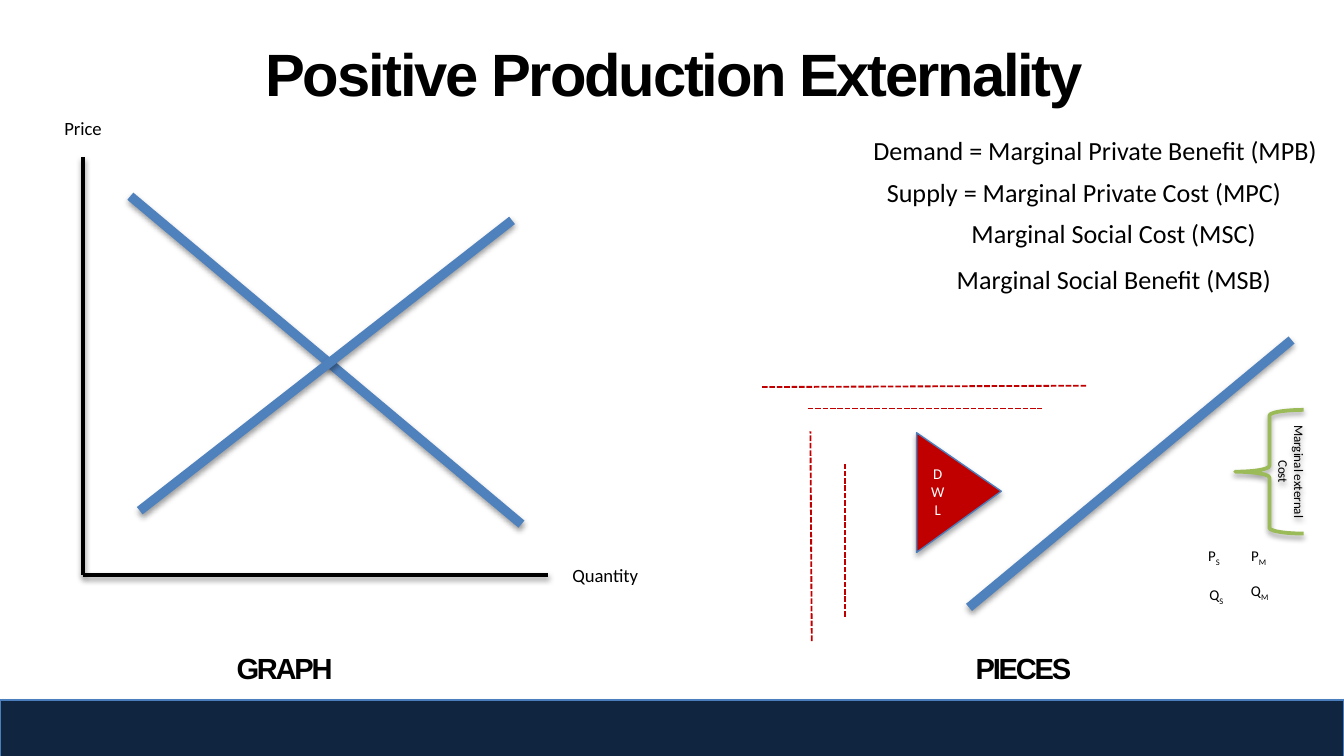
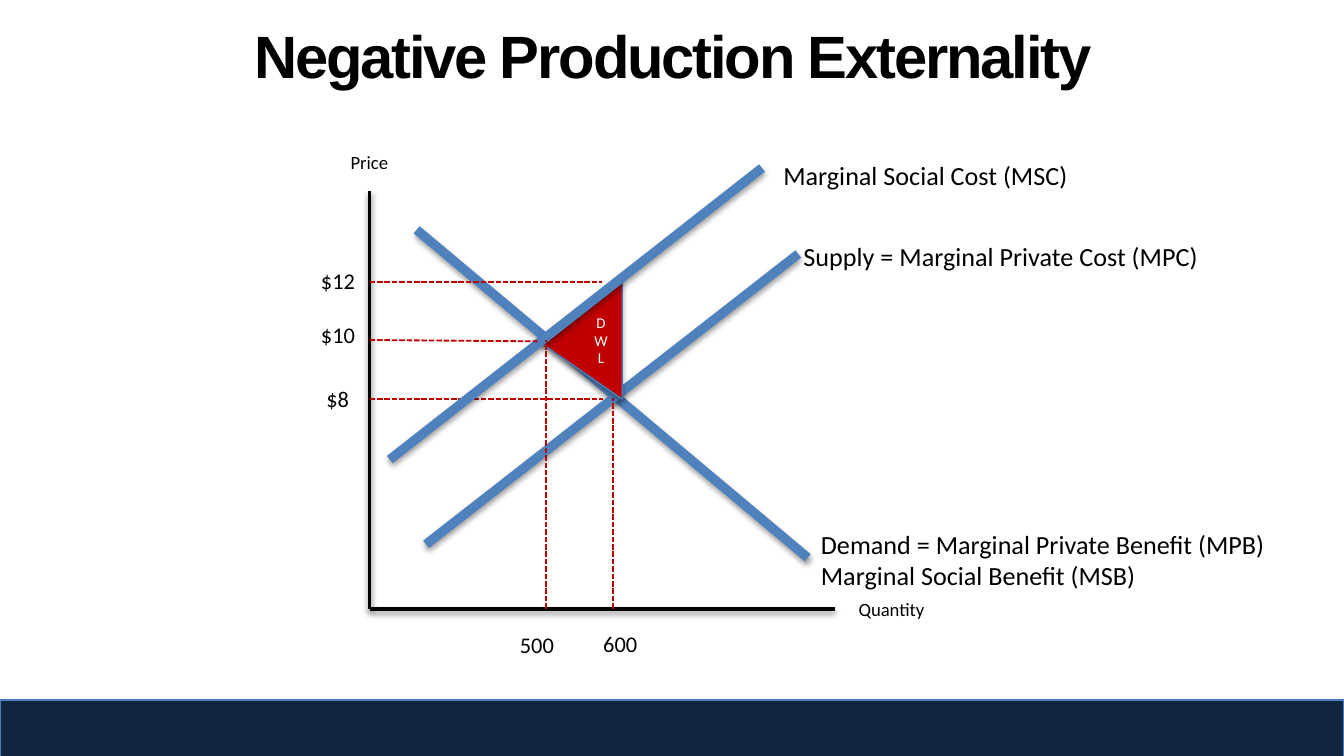
from dataclasses import dataclass

from lxml.etree import SubElement
from pptx import Presentation
from pptx.dml.color import RGBColor
from pptx.enum.dml import MSO_LINE_DASH_STYLE as DASH
from pptx.enum.shapes import MSO_CONNECTOR as CONN, MSO_SHAPE as SHAPE
from pptx.enum.text import MSO_ANCHOR as ANCHOR, MSO_AUTO_SIZE as FIT, PP_ALIGN as ALIGN
from pptx.oxml.ns import qn
from pptx.util import Inches, Pt


@dataclass(frozen=True)
class Theme:
    ink: str = "000000"
    paper: str = "FFFFFF"
    band: str = "10253F"
    edge: str = "4B7EBC"
    curve: str = "4F81BD"
    loss: str = "C00000"
    brace: str = "9BBB59"
    head_font: str = "Arial"
    body_font: str = "Calibri"
    title: float = 32
    caption: float = 15.6
    caption_lead: float = 30.7
    curve_name: float = 14
    value: float = 12
    axis: float = 10
    small: float = 8
    tiny: float = 7
    tracking: float = -1.2
    shape_shadow: tuple = (35, 3.1, 1.8)  # opacity %, blur pt, distance pt
    line_shadow: tuple = (38, 3.1, 1.6)


# Names of the curves and the widths of their labels
MSC = ("Marginal Social Cost (MSC)", 2.34)
MPB = ("Demand = Marginal Private Benefit (MPB)", 3.54)
MPC = ("Supply = Marginal Private Cost (MPC)", 3.17)
MSB = ("Marginal Social Benefit (MSB)", 2.57)


def write(p, text, size, font=Theme.body_font, color=Theme.ink, bold=False,
          tracking=0, baseline=0):
    """Add one formatted run to a paragraph."""
    r = p.add_run()
    r.text = text
    r.font.name, r.font.size, r.font.bold = font, Pt(size), bold
    r.font.color.rgb = RGBColor.from_string(color)
    rPr = r._r.get_or_add_rPr()
    if tracking:
        rPr.set("spc", str(round(tracking * 100)))
    if baseline:
        rPr.set("baseline", str(baseline * 1000))


class Deck:
    def __init__(self, theme):
        self.t = theme
        self.prs = Presentation()
        self.prs.slide_width = Inches(10)
        self.prs.slide_height = Inches(10) * 9 // 16
        self.s = None

    def heading_style(self):
        return dict(font=self.t.head_font, bold=True, tracking=self.t.tracking)

    def inset(self, tf):
        tf.margin_left = tf.margin_right = Inches(0.07)
        tf.margin_top = tf.margin_bottom = Inches(0.04)

    def effects(self, sp, shadow=None):
        """Replace the inherited shadow with the given one, or with none."""
        effects = SubElement(sp._element.spPr, qn("a:effectLst"))
        if shadow:
            opacity, blur, distance = shadow
            outer = SubElement(effects, qn("a:outerShdw"), blurRad=str(Pt(blur)),
                               dist=str(Pt(distance)), dir="5400000", rotWithShape="0")
            color = SubElement(outer, qn("a:srgbClr"), val=self.t.ink)
            SubElement(color, qn("a:alpha"), val=str(opacity * 1000))

    def slide(self, title, x, y, w):
        """Start a slide with its band and title."""
        self.s = self.prs.slides.add_slide(self.prs.slide_layouts[5])
        self.shape(SHAPE.RECTANGLE, 0, 5.21, 10, 0.42, fill=self.t.band)
        sp = self.s.shapes.title
        sp.left, sp.top, sp.width, sp.height = map(Inches, (x, y, w, 0.94))
        tf = sp.text_frame
        tf.word_wrap, tf.auto_size, tf.vertical_anchor = True, FIT.NONE, ANCHOR.TOP
        self.inset(tf)
        p = tf.paragraphs[0]
        p.alignment = ALIGN.CENTER
        write(p, title, self.t.title, **self.heading_style())

    def shape(self, kind, x, y, w, h, fill=None, line=None, width=0.75, shadow=None):
        sp = self.s.shapes.add_shape(kind, *map(Inches, (x, y, w, h)))
        if fill:
            sp.fill.solid()
            sp.fill.fore_color.rgb = RGBColor.from_string(fill)
        else:
            sp.fill.background()
        sp.line.color.rgb = RGBColor.from_string(line or self.t.edge)
        sp.line.width = Pt(width)
        self.effects(sp, shadow or self.t.shape_shadow)
        return sp

    def side_text(self, sp, text, size, color, vert):
        """Centre turned text inside a shape."""
        tf = sp.text_frame
        tf.word_wrap, tf.vertical_anchor = True, ANCHOR.MIDDLE
        tf._txBody.bodyPr.set("vert", vert)
        p = tf.paragraphs[0]
        p.alignment = ALIGN.CENTER
        write(p, text, size, color=color)

    def loss_triangle(self, x, y, rotation, vert):
        sp = self.shape(SHAPE.ISOSCELES_TRIANGLE, x, y, 0.89, 0.63, fill=self.t.loss)
        sp.adjustments[0] = 0.489
        sp.rotation = rotation
        self.side_text(sp, "DWL", self.t.small, self.t.paper, vert)

    def cost_brace(self, x, y, w, h):
        sp = self.shape(SHAPE.LEFT_BRACE, x, y, w, h, line=self.t.brace, width=2,
                        shadow=self.t.line_shadow)
        self.side_text(sp, "Marginal external Cost", self.t.tiny, self.t.ink, "vert")

    def line(self, x1, y1, x2, y2, color, width, dash=None, shadow=None):
        ln = self.s.shapes.add_connector(CONN.STRAIGHT, *map(Inches, (x1, y1, x2, y2)))
        ln.line.color.rgb = RGBColor.from_string(color)
        ln.line.width = Pt(width)
        if dash:
            ln.line.dash_style = dash
        self.effects(ln, shadow)

    def axis(self, *ends):
        self.line(*ends, self.t.ink, 2, shadow=self.t.line_shadow)

    def curve(self, *ends):
        self.line(*ends, self.t.curve, 5, shadow=self.t.line_shadow)

    def guide(self, *ends):
        self.line(*ends, self.t.loss, 1, dash=DASH.SQUARE_DOT)

    def label(self, text, x, y, w, size, sub=""):
        """Place a one-line label, with an optional subscript."""
        h = 0.1 + size * 0.017
        tf = self.s.shapes.add_textbox(*map(Inches, (x, y, w, h))).text_frame
        tf.word_wrap, tf.auto_size = False, FIT.SHAPE_TO_FIT_TEXT
        p = tf.paragraphs[0]
        write(p, text, size)
        if sub:
            write(p, sub, size, baseline=-25)

    def curve_name(self, name, x, y):
        text, w = name
        self.label(text, x, y, w, self.t.curve_name)

    def graph(self, x, y):
        """Draw axes with demand and supply, measured from the origin (x, y)."""
        self.axis(x, y, x + 3.46, y)
        self.axis(x, y - 3.11, x, y)
        self.label("Quantity", x + 3.54, y - 0.13, 0.7, self.t.axis)
        self.label("Price", x - 0.24, y - 3.46, 0.48, self.t.axis)
        self.curve(x + 0.35, y - 2.82, x + 3.26, y - 0.38)
        self.curve(x + 3.19, y - 2.64, x + 0.42, y - 0.48)

    def captions(self, *names, stops):
        """Write captions on one line, each at its own tab stop."""
        box = self.s.shapes.add_textbox(*map(Inches, (0.19, 4.59, 9.63, 0.6)))
        tf = box.text_frame
        tf.word_wrap = True
        self.inset(tf)
        p = tf.paragraphs[0]
        p.alignment = ALIGN.JUSTIFY
        tabs = SubElement(p._p.get_or_add_pPr(), qn("a:tabLst"))
        for stop in stops:
            SubElement(tabs, qn("a:tab"), pos=str(Inches(stop)), algn="l")
        write(p, "\t", self.t.caption_lead, **self.heading_style())
        write(p, "\t".join(names), self.t.caption, **self.heading_style())


def positive_slide(d):
    d.slide("Positive Production Externality", 0.15, 0.23, 9.73)
    d.graph(0.62, 4.28)

    # Loose guides, loss triangle and curve
    for ends in ((6.01, 3.04, 7.75, 3.04), (6.29, 4.59, 6.29, 3.45),
                 (5.67, 2.88, 8.09, 2.87), (6.04, 4.77, 6.03, 3.21)):
        d.guide(*ends)
    d.loss_triangle(6.69, 3.35, 90, "vert270")
    d.curve(9.61, 2.53, 7.21, 4.52)

    # Loose labels
    for name, x, y in ((MPB, 6.4, 0.95), (MPC, 6.5, 1.26),
                       (MSC, 7.13, 1.57), (MSB, 7.02, 1.91)):
        d.curve_name(name, x, y)
    for letter, sub, x, y, w in (("P", "M", 9.21, 4.02, 0.32), ("Q", "M", 9.21, 4.28, 0.34),
                                 ("P", "S", 8.89, 4.02, 0.29), ("Q", "S", 8.9, 4.31, 0.31)):
        d.label(letter, x, y, w, d.t.small, sub=sub)

    d.captions("GRAPH", "PIECES", stops=(1.5, 7))
    d.cost_brace(9.19, 3.05, 0.51, 0.92)


def negative_slide(d):
    x, y = 2.75, 4.53
    d.slide("Negative Production Externality", 0.19, 0.1, 9.63)
    d.graph(x, y)

    # Market outcome, loss and social cost
    d.guide(x, 2.97, 4.49, 2.97)
    d.guide(4.56, y, 4.56, 2.96)
    d.loss_triangle(3.87, 2.21, 270, "vert")
    d.curve(5.67, 1.25, 2.9, 3.42)

    # Social optimum
    d.guide(x, 2.53, 4, 2.54)
    d.guide(4.06, y, 4.06, 2.53)
    d.guide(x, 2.1, 4.48, 2.1)

    # Names and values
    for name, left, top in ((MSC, 5.73, 1.14), (MPC, 5.88, 1.74),
                            (MPB, 6.01, 3.88), (MSB, 6.01, 4.11)):
        d.curve_name(name, left, top)
    for text, left, top, w in (("$12", 2.29, 1.94, 0.46), ("$10", 2.29, 2.34, 0.46),
                               ("$8", 2.33, 2.82, 0.37), ("500", 3.77, 4.65, 0.46),
                               ("600", 4.39, 4.64, 0.46)):
        d.label(text, left, top, w, d.t.value)


def main():
    d = Deck(Theme())
    positive_slide(d)
    negative_slide(d)
    d.prs.save("out.pptx")


if __name__ == "__main__":
    main()
